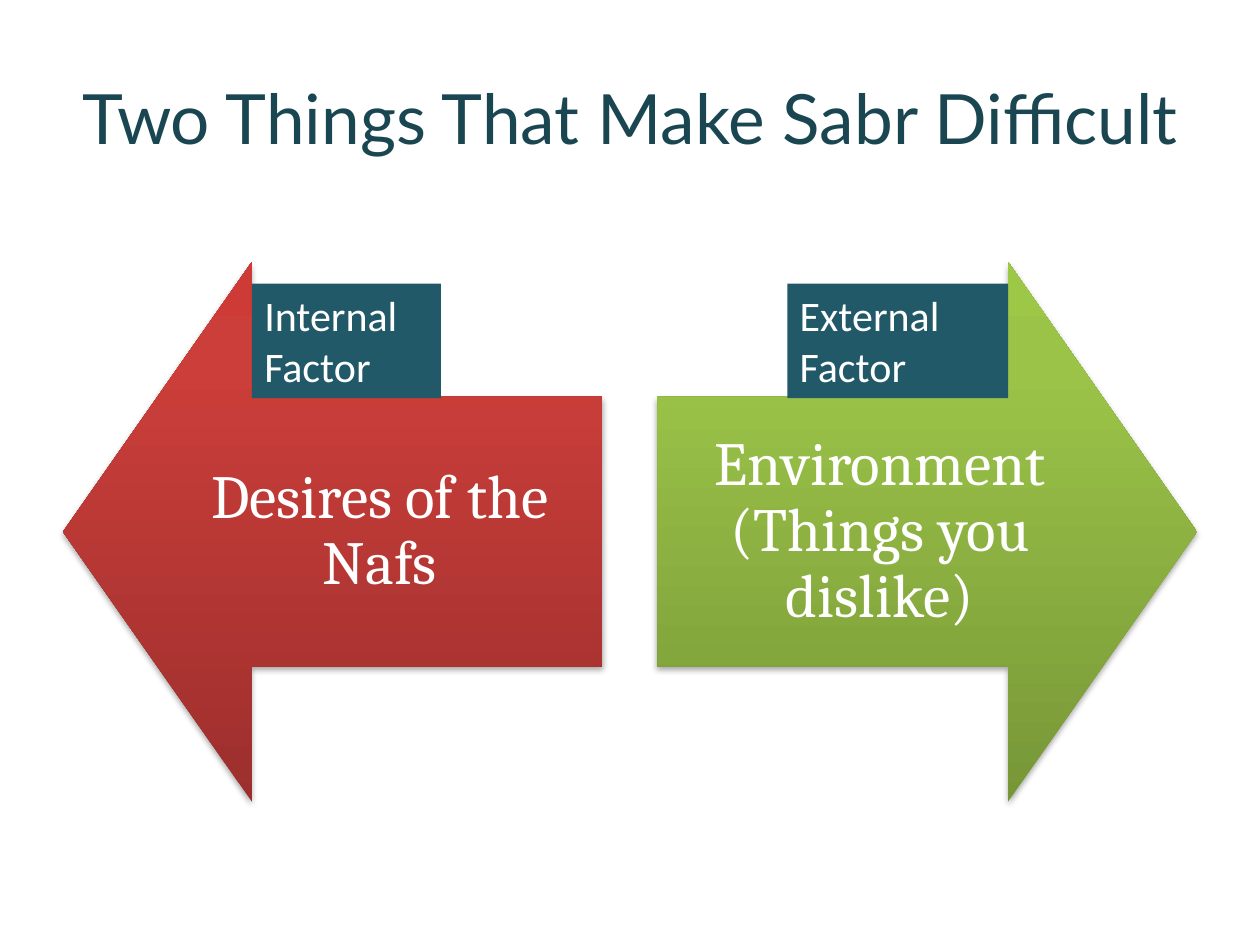
from lxml import etree
from pptx import Presentation
from pptx.dml.color import RGBColor
from pptx.enum.shapes import MSO_SHAPE
from pptx.enum.text import MSO_ANCHOR, PP_ALIGN
from pptx.oxml import parse_xml
from pptx.oxml.ns import nsdecls, qn
from pptx.util import Cm, Pt

UP_ARROW, RECTANGLE = MSO_SHAPE.UP_ARROW, MSO_SHAPE.RECTANGLE
TOP, MIDDLE = MSO_ANCHOR.TOP, MSO_ANCHOR.MIDDLE
LEFT, CENTER = PP_ALIGN.LEFT, PP_ALIGN.CENTER

WHITE = RGBColor(0xFF, 0xFF, 0xFF)
DARK_TEAL = RGBColor(0x1A, 0x46, 0x52)
TEAL = RGBColor(0x21, 0x59, 0x68)
REDS = [RGBColor(0x9C, 0x2F, 0x2D), RGBColor(0xCB, 0x3E, 0x3A), RGBColor(0xCE, 0x3B, 0x37)]
GREENS = [RGBColor(0x77, 0x97, 0x37), RGBColor(0x9B, 0xC3, 0x48), RGBColor(0x9D, 0xC7, 0x46)]
STOPS = [0, 80, 100]

# Content
TITLE = "Two Things That Make Sabr Difficult"
FACTORS = [
    {"label": "Internal Factor", "cause": "Desires of the Nafs",
     "points_left": True, "colors": REDS, "label_width": 3.81},
    {"label": "External Factor", "cause": "Environment (Things you dislike)",
     "points_left": False, "colors": GREENS, "label_width": 4.45},
]

# Layout in centimetres
SLIDE_WIDTH, SLIDE_HEIGHT = 25.4, 19.05
MARGIN = 1.27
ARROW_SIZE, ARROW_TOP = 10.88, 5.28
HEAD_SHARE, BODY_SHARE = 0.35, 0.5
HEAD = ARROW_SIZE * HEAD_SHARE
CAUSE_WIDTH = ARROW_SIZE - HEAD / 2
CAUSE_HEIGHT = ARROW_SIZE * BODY_SHARE
CAUSE_TOP = ARROW_TOP + (ARROW_SIZE - CAUSE_HEIGHT) / 2
LABEL_TOP, LABEL_HEIGHT = 5.72, 2.31
CAUSE_INSET = 0.69


def write(shape, text, font_name, size, color, align, anchor, inset=None):
    frame = shape.text_frame
    frame.word_wrap = True
    frame.vertical_anchor = anchor
    if inset is not None:
        frame.margin_left = frame.margin_right = Cm(inset)
        frame.margin_top = frame.margin_bottom = Cm(inset)
    frame.text = text
    paragraph = frame.paragraphs[0]
    paragraph.alignment = align
    font = paragraph.runs[0].font
    font.name, font.size, font.color.rgb = font_name, Pt(size), color
    return paragraph


def paint_arrow(arrow, colors):
    """Vertical gradient that ignores the rotation, and a soft shadow below."""
    stops = "".join(
        f'<a:gs pos="{stop * 1000}"><a:srgbClr val="{color}"/></a:gs>'
        for stop, color in zip(STOPS, colors))
    arrow.line.fill.background()
    properties = arrow._element.spPr
    properties.find(qn("a:ln")).addprevious(parse_xml(
        f'<a:gradFill {nsdecls("a")} rotWithShape="0"><a:gsLst>{stops}</a:gsLst>'
        '<a:lin ang="16200000" scaled="0"/></a:gradFill>'))
    effects = etree.SubElement(properties, qn("a:effectLst"))
    effects.append(parse_xml(
        f'<a:outerShdw {nsdecls("a")} blurRad="40000" dist="23000" dir="5400000" '
        'rotWithShape="0"><a:srgbClr val="000000"><a:alpha val="35000"/>'
        '</a:srgbClr></a:outerShdw>'))


def add_factor(shapes, factor):
    points_left = factor["points_left"]
    arrow_left = MARGIN if points_left else SLIDE_WIDTH - MARGIN - ARROW_SIZE

    # Arrow pointing away from the centre
    arrow = shapes.add_shape(UP_ARROW, Cm(arrow_left), Cm(ARROW_TOP),
                             Cm(ARROW_SIZE), Cm(ARROW_SIZE))
    arrow.adjustments[0], arrow.adjustments[1] = BODY_SHARE, HEAD_SHARE
    arrow.rotation = 270 if points_left else 90
    paint_arrow(arrow, factor["colors"])

    # Cause written on the arrow's body
    cause_left = arrow_left + (HEAD / 2 if points_left else 0)
    cause = shapes.add_textbox(Cm(cause_left), Cm(CAUSE_TOP),
                               Cm(CAUSE_WIDTH), Cm(CAUSE_HEIGHT))
    paragraph = write(cause, factor["cause"], "Cambria", 35, WHITE, CENTER, MIDDLE, CAUSE_INSET)
    paragraph.line_spacing = 0.9


def add_label(shapes, factor):
    """Label resting on the body, against the back of the arrowhead."""
    width = factor["label_width"]
    if factor["points_left"]:
        left = MARGIN + HEAD
    else:
        left = SLIDE_WIDTH - MARGIN - HEAD - width
    label = shapes.add_shape(RECTANGLE, Cm(left), Cm(LABEL_TOP), Cm(width), Cm(LABEL_HEIGHT))
    label.shadow.inherit = False
    label.fill.solid()
    label.fill.fore_color.rgb = TEAL
    label.line.fill.background()
    write(label, factor["label"], "Calibri", 24, WHITE, LEFT, TOP)


def main():
    deck = Presentation()
    deck.slide_width, deck.slide_height = Cm(SLIDE_WIDTH), Cm(SLIDE_HEIGHT)
    shapes = deck.slides.add_slide(deck.slide_layouts[6]).shapes

    title = shapes.add_textbox(Cm(MARGIN), Cm(0.76), Cm(SLIDE_WIDTH - 2 * MARGIN), Cm(3.18))
    write(title, TITLE, "Lato", 39.6, DARK_TEAL, CENTER, MIDDLE)

    for factor in FACTORS:
        add_factor(shapes, factor)
    for factor in FACTORS:
        add_label(shapes, factor)
    deck.save("out.pptx")


if __name__ == "__main__":
    main()
